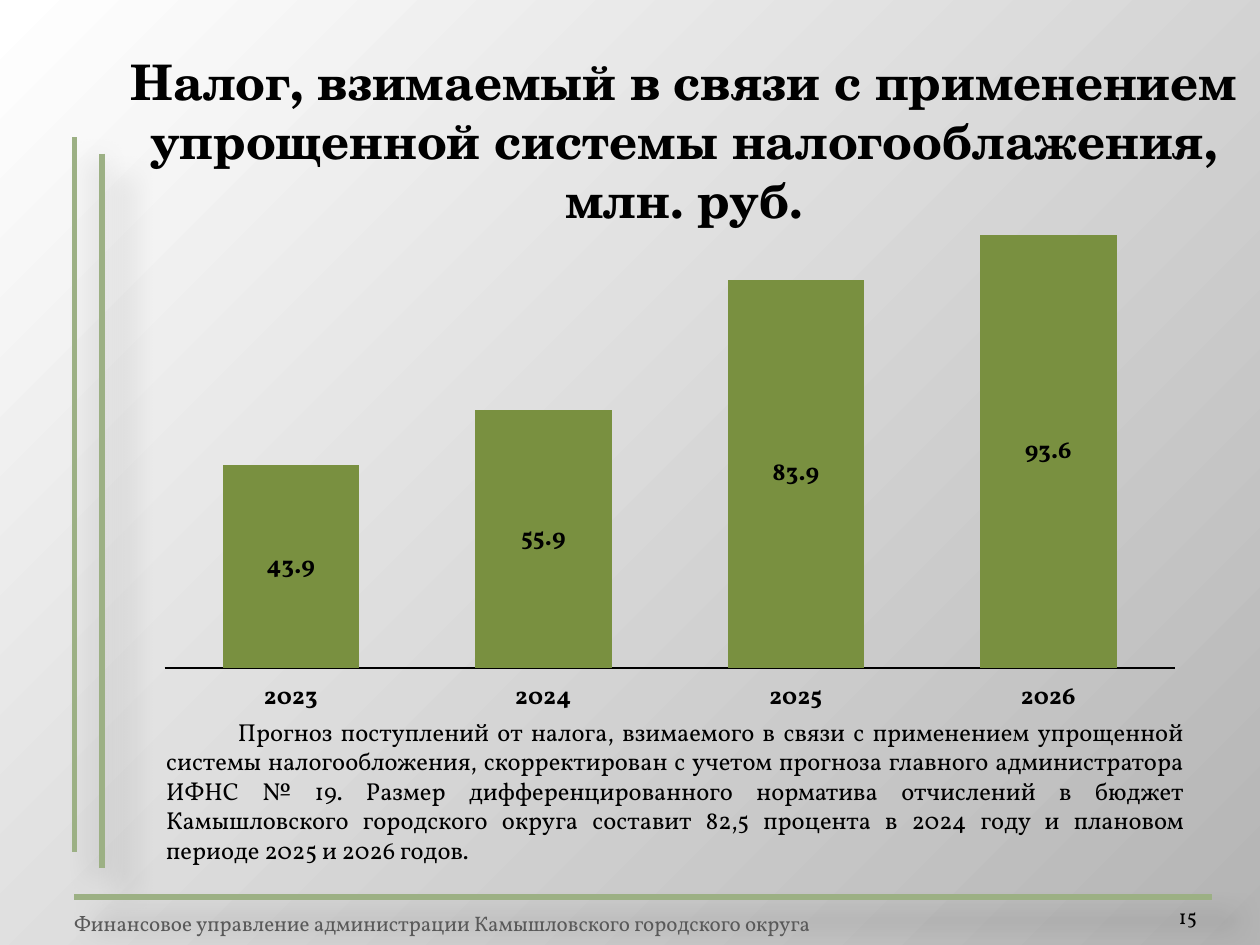
from lxml.etree import SubElement
from pptx import Presentation
from pptx.chart.data import CategoryChartData as ChartData
from pptx.dml.color import RGBColor
from pptx.enum.chart import XL_CHART_TYPE as Kind, XL_LABEL_POSITION as Spot, XL_TICK_MARK as Tick
from pptx.enum.chart import XL_TICK_LABEL_POSITION as TickSpot
from pptx.enum.shapes import MSO_CONNECTOR as Link
from pptx.enum.text import MSO_ANCHOR as Anchor, MSO_AUTO_SIZE as Auto, PP_ALIGN as Align
from pptx.oxml import parse_xml
from pptx.oxml.ns import nsdecls, qn
from pptx.util import Inches, Pt

WIDE, HIGH = Inches(10), Inches(7.5)
COL, ROW = WIDE / 100, HIGH / 75
BODY, HEAD = "Vollkorn", "TeX Gyre Schola"
BLACK, GREY, SAGE, OLIVE = "000000", "595959", "9CB084", "799040"
TITLE = "Налог, взимаемый в связи с применением упрощенной системы налогооблажения, млн. руб."
NOTE = (
    "Прогноз поступлений от налога, взимаемого в связи с применением упрощенной системы "
    "налогообложения, скорректирован с учетом прогноза главного администратора ИФНС № 19. "
    "Размер дифференцированного норматива отчислений в бюджет Камышловского городского округа "
    "составит 82,5 процента в 2024 году и плановом периоде 2025 и 2026 годов."
)
FOOTER = "Финансовое управление администрации Камышловского городского округа"


def paint(target, code):
    target.rgb = RGBColor.from_string(code)


def place(col, row, cols, rows):
    return int(col * COL), int(row * ROW), int(cols * COL), int(rows * ROW)


def style(font, size, face=BODY, tint=BLACK, bold=False):
    font.size, font.name, font.bold = Pt(size), face, bold
    paint(font.color, tint)


def add_back(slide):
    fill = slide.background.fill
    fill.gradient()
    for stop, (spot, tint) in zip(fill.gradient_stops, ((0, "FFFFFF"), (1, "B4B4B4"))):
        stop.position = spot
        paint(stop.color, tint)
    grad = next(slide.background._cSld.iter(qn("a:gradFill")))
    grad.replace(grad.find(qn("a:lin")), parse_xml(
        f'<a:path {nsdecls("a")} path="circle">'
        '<a:fillToRect r="100000" b="100000"/></a:path>'))


def add_rule(slide, col, row, cols, rows):
    left, top, width, height = place(col, row, cols, rows)
    rule = slide.shapes.add_connector(Link.STRAIGHT, left, top, left + width, top + height)
    rule.line.width = Pt(3)
    paint(rule.line.color, SAGE)
    glow = SubElement(rule._element.spPr, qn("a:effectLst"))
    glow.append(parse_xml(
        f'<a:outerShdw {nsdecls("a")} blurRad="{Pt(15)}" dist="{Pt(18)}" dir="2700000" '
        f'algn="tl" rotWithShape="0"><a:srgbClr val="{BLACK}">'
        '<a:alpha val="26000"/></a:srgbClr></a:outerShdw>'))


def add_text(slide, words, box, size, align=Align.LEFT, **look):
    frame = slide.shapes.add_textbox(*place(*box)).text_frame
    frame.word_wrap = True
    frame.text = words
    line = frame.paragraphs[0]
    line.alignment = align
    style(line.runs[0].font, size, **look)
    return frame


def add_bars(slide, box, years, sums):
    data = ChartData()
    data.categories = years
    data.add_series("Series 1", sums)
    chart = slide.shapes.add_chart(Kind.COLUMN_STACKED, *place(*box), data).chart
    chart.has_legend = chart.has_title = False
    style(chart.font, 10)

    base = chart.category_axis
    base.major_tick_mark = base.minor_tick_mark = Tick.NONE
    base.tick_label_position = TickSpot.LOW
    base.format.line.width = Pt(0.75)
    paint(base.format.line.color, BLACK)
    style(base.tick_labels.font, 14, bold=True)

    scale = chart.value_axis
    scale.minimum_scale, scale.maximum_scale = 0, 100
    scale.has_major_gridlines = scale.visible = False
    scale.tick_labels.number_format = "0.0"
    scale.tick_labels.number_format_is_linked = False

    plot = chart.plots[0]
    plot.gap_width, plot.overlap, plot.vary_by_categories = 85, 100, False
    bars = plot.series[0]
    bars.format.fill.solid()
    paint(bars.format.fill.fore_color, OLIVE)
    labels = bars.data_labels
    labels.show_value, labels.position = True, Spot.CENTER
    labels.number_format, labels.number_format_is_linked = "0.0", False
    style(labels.font, 14, bold=True)
    set_plot(chart, x=0.02, y=0.02, w=0.96, h=0.88)


def set_plot(chart, **parts):
    area = next(chart._chartSpace.iter(qn("c:plotArea")))
    for old in area.findall(qn("c:layout")):
        area.remove(old)
    modes = {"layoutTarget": "inner", "xMode": "edge", "yMode": "edge"}
    tags = "".join(f'<c:{key} val="{val}"/>' for key, val in {**modes, **parts}.items())
    area.insert(0, parse_xml(
        f'<c:layout {nsdecls("c")}><c:manualLayout>{tags}</c:manualLayout></c:layout>'))


def main():
    deck = Presentation()
    deck.slide_width, deck.slide_height = WIDE, HIGH
    slide = deck.slides.add_slide(deck.slide_layouts[6])
    add_back(slide)

    for box in ((5.9, 10.9, 0, 56.7), (8.1, 12.2, 0, 56.7), (5.9, 71.2, 90.3, 0)):
        add_rule(slide, *box)

    foot = add_text(slide, FOOTER, (4.9, 71.8, 91.3, 3), 12, tint=GREY)
    page = add_text(slide, "15", (86.7, 70.2, 8.3, 4), 12, Align.RIGHT)
    page.vertical_anchor = Anchor.BOTTOM
    page.margin_left = page.margin_right = 0

    note = add_text(slide, NOTE, (12.2, 56.4, 82.8, 12.8), 14, Align.JUSTIFY)
    note.paragraphs[0]._p.get_or_add_pPr().set("indent", str(Inches(0.57)))
    title = add_text(slide, TITLE, (8.6, 3.6, 91.4, 10.4), 28, Align.CENTER, face=HEAD, bold=True)
    for frame in (foot, note, title):
        frame.auto_size = Auto.SHAPE_TO_FIT_TEXT

    add_bars(slide, (11.4, 15.5, 83.5, 41.7),
             ("2023", "2024", "2025", "2026"), (43.9, 55.9, 83.9, 93.6))
    deck.save("out.pptx")


if __name__ == "__main__":
    main()
